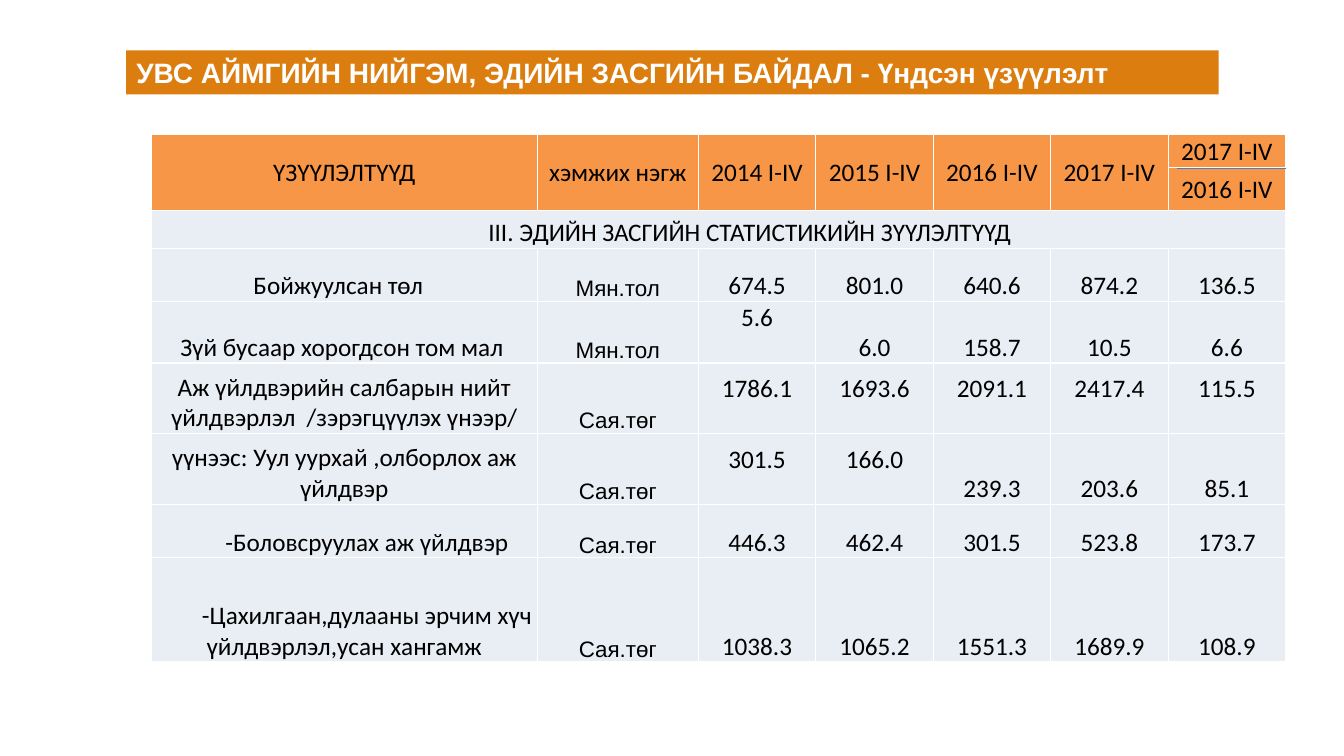
"""Build the slide with the main economic indicators of Uvs province."""
from lxml import etree
from pptx import Presentation
from pptx.dml.color import RGBColor
from pptx.enum.shapes import MSO_CONNECTOR
from pptx.enum.text import MSO_ANCHOR, MSO_AUTO_SIZE, PP_ALIGN
from pptx.oxml.ns import qn
from pptx.util import Cm, Pt

MIDDLE, BOTTOM = MSO_ANCHOR.MIDDLE, MSO_ANCHOR.BOTTOM
LEFT, CENTER = PP_ALIGN.LEFT, PP_ALIGN.CENTER
STRAIGHT = MSO_CONNECTOR.STRAIGHT
NO_FIT = MSO_AUTO_SIZE.NONE

COLORS = {"banner": "DC7D0F", "head": "F79646", "body": "E9EDF4",
          "text": "000000", "white": "FFFFFF", "rule": "4B7EBC"}

TITLE = "УВС АЙМГИЙН НИЙГЭМ, ЭДИЙН ЗАСГИЙН БАЙДАЛ - Үндсэн үзүүлэлт"
HEAD = ["ҮЗҮҮЛЭЛТҮҮД", "хэмжих нэгж", "2014 I-IV", "2015 I-IV",
        "2016 I-IV", "2017 I-IV", "2017 I-IV"]
BASE = "2016 I-IV"
SECTION = "III. ЭДИЙН ЗАСГИЙН СТАТИСТИКИЙН ЗҮҮЛЭЛТҮҮД"
DATA = [
    ("Бойжуулсан төл", "Мян.тол",
     "674.5", "801.0", "640.6", "874.2", "136.5"),
    ("Зүй бусаар хорогдсон том мал", "Мян.тол",
     "5.6", "6.0", "158.7", "10.5", "6.6"),
    ("Аж үйлдвэрийн салбарын нийт үйлдвэрлэл  /зэрэгцүүлэх үнээр/",
     "Сая.төг", "1786.1", "1693.6", "2091.1", "2417.4", "115.5"),
    ("үүнээс: Уул уурхай ,олборлох аж үйлдвэр", "Сая.төг",
     "301.5", "166.0", "239.3", "203.6", "85.1"),
    ("-Боловсруулах аж үйлдвэр", "Сая.төг",
     "446.3", "462.4", "301.5", "523.8", "173.7"),
    ("-Цахилгаан,дулааны эрчим хүч үйлдвэрлэл,усан хангамж", "Сая.төг",
     "1038.3", "1065.2", "1551.3", "1689.9", "108.9"),
]
RAISED = {1: [2], 2: [2, 3, 4, 5, 6], 3: [2, 3]}
TRIM = {0: 0.33, 1: 0.15}

COLS = [9.73, 4.06] + [2.96] * 5
ROWS = [0.84, 1.07, 0.96, 1.34, 1.47, 1.78, 1.78, 1.35, 2.62]
LEFT_X, TOP_Y = 3.81, 3.39
PAD, LINE, INDENT, SHIFT = 0.03, 0.74, 1.14, 1.58


def color(name):
    return RGBColor.from_string(COLORS[name])


def style(par, font, size, tint, bold=False):
    for run in par.runs:
        run.font.name, run.font.size = font, Pt(size)
        run.font.bold = bold
        run.font.color.rgb = color(tint)


def border(cell):
    props = cell._tc.get_or_add_tcPr()
    for side in ("lnL", "lnR", "lnT", "lnB"):
        edge = etree.SubElement(props, qn("a:" + side), w=str(Pt(1)))
        fill = etree.SubElement(edge, qn("a:solidFill"))
        etree.SubElement(fill, qn("a:srgbClr"), val=COLORS["white"])


def indent(cell, size):
    props = cell.text_frame.paragraphs[0]._p.get_or_add_pPr()
    props.set("marL", "0")
    props.set("indent", str(Cm(size)))


def write(cell, text, anchor=BOTTOM, font="Calibri", size=18):
    cell.text = text
    cell.vertical_anchor = anchor
    cell.margin_left = cell.margin_right = cell.margin_top = Cm(PAD)
    cell.margin_bottom = 0
    par = cell.text_frame.paragraphs[0]
    par.alignment = CENTER
    style(par, font, size, "text")


def add_title(slide):
    title = slide.shapes.title
    title.left, title.top = Cm(3.18), Cm(1.27)
    title.width, title.height = Cm(27.53), Cm(1.11)
    title.fill.solid()
    title.fill.fore_color.rgb = color("banner")
    frame = title.text_frame
    frame.text = TITLE
    frame.auto_size = NO_FIT
    frame.word_wrap = True
    frame.vertical_anchor = MIDDLE
    par = frame.paragraphs[0]
    par.alignment = LEFT
    style(par, "Arial", 20, "white", True)


def add_grid(slide):
    grid = slide.shapes.add_table(
        len(ROWS), len(COLS), Cm(LEFT_X), Cm(TOP_Y),
        Cm(sum(COLS)), Cm(sum(ROWS))).table
    grid.first_row = grid.horz_banding = False
    for col, width in zip(grid.columns, COLS):
        col.width = Cm(width)
    for num, (row, height) in enumerate(zip(grid.rows, ROWS)):
        row.height = Cm(height)
        for cell in row.cells:
            border(cell)
            cell.fill.solid()
            cell.fill.fore_color.rgb = color("head" if num < 2 else "body")

    for col, text in enumerate(HEAD):
        write(grid.cell(0, col), text, MIDDLE)
        if col < len(HEAD) - 1:
            grid.cell(0, col).merge(grid.cell(1, col))
    write(grid.cell(1, len(HEAD) - 1), BASE, MIDDLE)

    band = grid.cell(2, 0)
    band.merge(grid.cell(2, len(COLS) - 1))
    write(band, SECTION)
    indent(band, SHIFT)

    for num, items in enumerate(DATA):
        for col, text in enumerate(items):
            cell = grid.cell(num + 3, col)
            if col == 1:
                write(cell, text, font="Arial", size=16)
            else:
                write(cell, text)
            if col in RAISED.get(num, []):
                cell.margin_bottom = Cm(LINE)
        name = grid.cell(num + 3, 0)
        name.margin_right = Cm(TRIM.get(num, PAD))
        if items[0].startswith("-"):
            indent(name, INDENT)


def add_rule(slide):
    y = Cm(TOP_Y + ROWS[0] + 0.02)
    end = LEFT_X + sum(COLS)
    rule = slide.shapes.add_connector(STRAIGHT, Cm(end - 2.74), y, Cm(end), y)
    rule.line.color.rgb = color("rule")
    rule.line.width = Pt(0.75)
    etree.SubElement(rule._element.spPr, qn("a:effectLst"))


def main():
    deck = Presentation()
    deck.slide_width, deck.slide_height = Cm(33.87), Cm(19.05)
    slide = deck.slides.add_slide(deck.slide_layouts[5])
    add_title(slide)
    add_grid(slide)
    add_rule(slide)
    deck.save("out.pptx")


if __name__ == "__main__":
    main()
